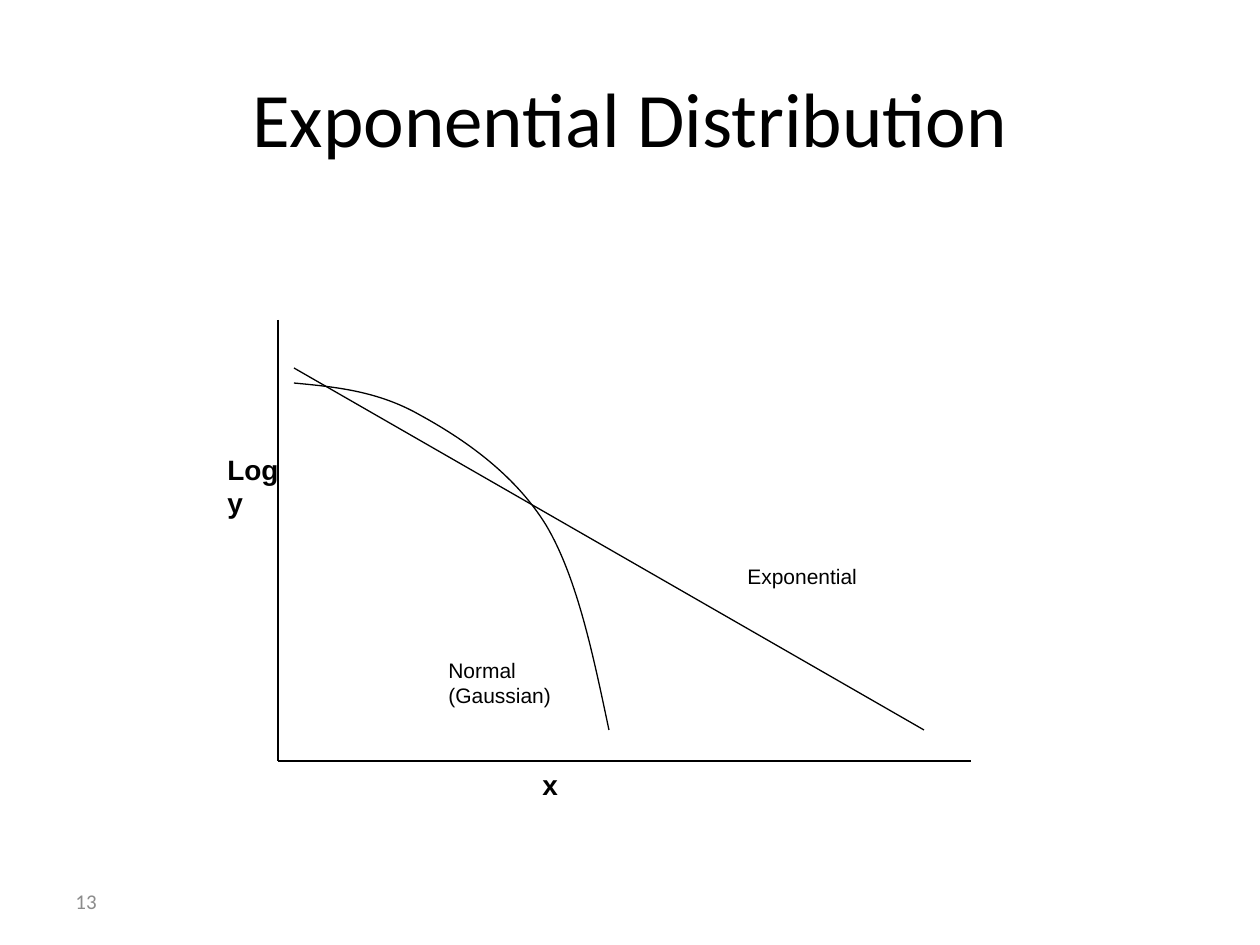
from lxml import etree
from pptx import Presentation
from pptx.dml.color import RGBColor
from pptx.enum.shapes import MSO_CONNECTOR
from pptx.enum.text import MSO_ANCHOR, PP_ALIGN
from pptx.oxml.ns import qn
from pptx.util import Emu, Pt

STRAIGHT = MSO_CONNECTOR.STRAIGHT
MIDDLE = MSO_ANCHOR.MIDDLE
TOP = MSO_ANCHOR.TOP
CENTER = PP_ALIGN.CENTER
PX_PER_INCH = 126
TITLE_ONLY = 5
BLACK = "000000"
GREY = "8C8C8C"

AXIS_LEFT, AXIS_TOP, AXIS_RIGHT, AXIS_BOTTOM = 278, 320, 971, 761
STRAIGHT_LINES = [
    (AXIS_LEFT, AXIS_TOP, AXIS_LEFT, AXIS_BOTTOM),
    (AXIS_LEFT, AXIS_BOTTOM, AXIS_RIGHT, AXIS_BOTTOM),
    (294, 368, 924, 730),
]
NORMAL_CURVE = [
    (294, 383),
    (336, 387), (378, 391), (420, 415),
    (462, 438), (514, 473), (546, 525),
    (577, 577), (593, 654), (609, 730),
]
LABELS = [
    ("Log y", (215, 446, 78, 95), 16, True),
    ("x", (530, AXIS_BOTTOM, 47, 48), 16, True),
    ("Exponential", (735, 557, 189, 63), 12, False),
    ("Normal\n(Gaussian)", (436, 651, 141, 63), 12, False),
]


def px(length):
    return Emu(round(length * 914400 / PX_PER_INCH))


def color(code):
    return RGBColor.from_string(code)


def format_text(frame, size, font_name, code, bold=False):
    for para in frame.paragraphs:
        for span in para.runs:
            span.font.size = Pt(size)
            span.font.name = font_name
            span.font.bold = bold
            span.font.color.rgb = color(code)


def format_line(shape):
    shape.line.color.rgb = color(BLACK)
    shape.line.width = Pt(0.75)


def set_title(slide, text):
    title = slide.shapes.title
    title.left, title.top, title.width, title.height = map(px, (63, 38, 1134, 158))
    frame = title.text_frame
    frame.text = text
    frame.vertical_anchor = MIDDLE
    frame.paragraphs[0].alignment = CENTER
    format_text(frame, 44, "Calibri", BLACK)


def add_label(shapes, text, bounds, size, bold=False, font_name="Arial",
              code=BLACK, anchor=TOP):
    box = shapes.add_textbox(*map(px, bounds))
    frame = box.text_frame
    frame.word_wrap = True
    frame.vertical_anchor = anchor
    frame.text = text
    format_text(frame, size, font_name, code, bold)


def add_line(shapes, ends):
    line = shapes.add_connector(STRAIGHT, *map(px, ends))
    format_line(line)
    etree.SubElement(line._element.spPr, qn("a:effectLst"))


def add_curve(shapes, points):
    start, *controls = [(px(x), px(y)) for x, y in points]
    builder = shapes.build_freeform(*start)
    builder.add_line_segments(controls, close=False)
    curve = builder.convert_to_shape()
    curve.shadow.inherit = False
    curve.fill.background()
    format_line(curve)
    path = next(curve._element.iter(qn("a:path")))
    segments = path.findall(qn("a:lnTo"))
    for first in range(0, len(segments), 3):
        bezier = etree.SubElement(path, qn("a:cubicBezTo"))
        for segment in segments[first:first + 3]:
            bezier.append(segment[0])
            path.remove(segment)


def main():
    deck = Presentation()
    deck.slide_width, deck.slide_height = px(1260), px(945)
    slide = deck.slides.add_slide(deck.slide_layouts[TITLE_ONLY])
    add_label(slide.shapes, "13", (63, 876, 294, 50), 12,
              font_name="Calibri", code=GREY, anchor=MIDDLE)
    set_title(slide, "Exponential Distribution")
    diagram = slide.shapes.add_group_shape().shapes
    for ends in STRAIGHT_LINES:
        add_line(diagram, ends)
    add_curve(diagram, NORMAL_CURVE)
    for label in LABELS:
        add_label(diagram, *label)
    deck.save("out.pptx")


if __name__ == "__main__":
    main()
